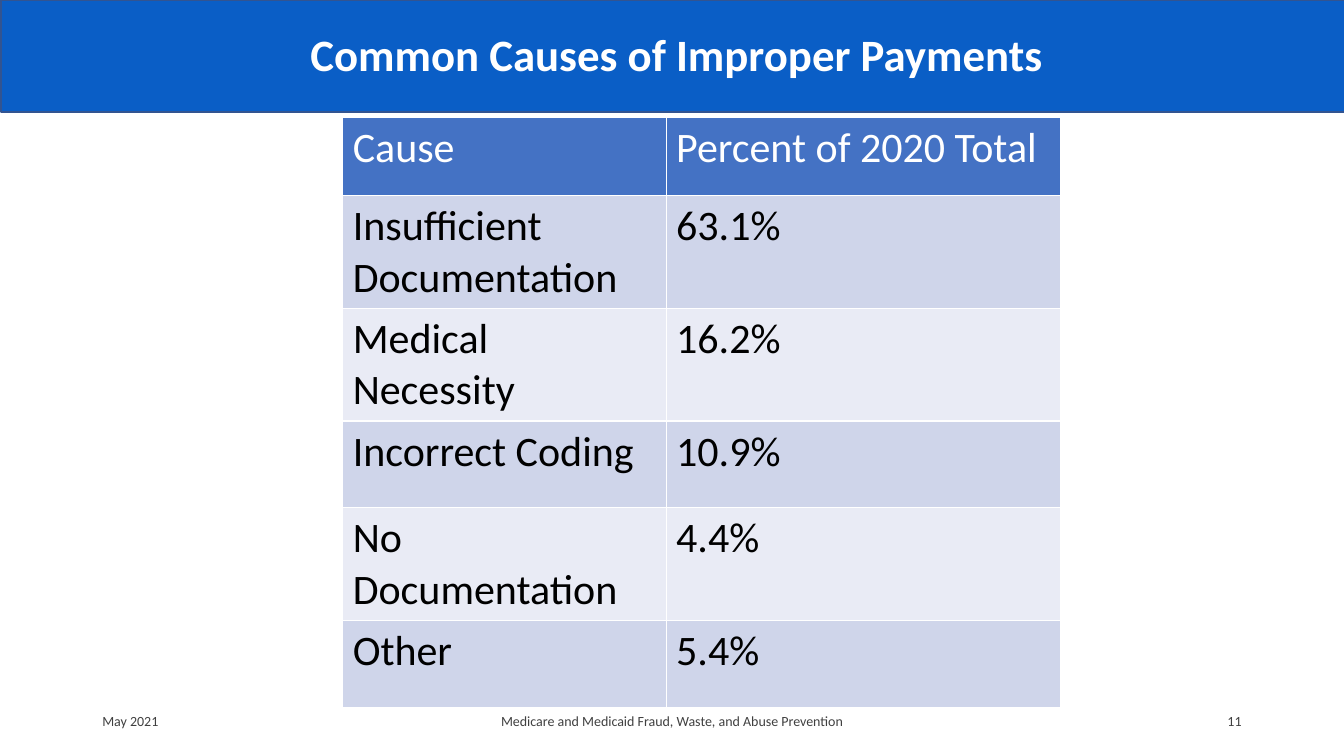
from pptx import Presentation
from pptx import util as u
from pptx.dml.color import RGBColor
from pptx.enum import shapes, text

HUES = {"blue": "0A5EC6", "edge": "325491", "head": "4472C4", "odd": "CFD5EA",
        "even": "E9EBF5", "white": "FFFFFF", "black": "000000", "grey": "404040"}
ROWS = [("Cause", "Percent of 2020 Total"),
        ("Insufficient Documentation", "63.1%"),
        ("Medical Necessity", "16.2%"),
        ("Incorrect Coding", "10.9%"),
        ("No Documentation", "4.4%"),
        ("Other", "5.4%")]
SIDES = {"left": text.PP_ALIGN.LEFT, "mid": text.PP_ALIGN.CENTER, "right": text.PP_ALIGN.RIGHT}


class Deck:
    """Holds the style and the current slide, and draws each kind of element."""

    def __init__(self, wide, high):
        self.pres = Presentation()
        self.pres.slide_width, self.pres.slide_height = u.Pt(wide), u.Pt(high)
        self.slide = self.pres.slides.add_slide(self.pres.slide_layouts[5])
        self.face = "Calibri"

    def hue(self, name):
        return RGBColor.from_string(HUES[name])

    def paint(self, item, name):
        item.fill.solid()
        item.fill.fore_color.rgb = self.hue(name)

    def letter(self, frame, words, size, hue, side="left", bold=False):
        frame.text = words
        para = frame.paragraphs[0]
        para.alignment = SIDES[side]
        look = {"name": self.face, "size": u.Pt(size), "bold": bold}
        font = para.runs[0].font
        for key, value in look.items():
            setattr(font, key, value)
        font.color.rgb = self.hue(hue)
        return para

    def frame(self, shape):
        look = {"word_wrap": True, "auto_size": text.MSO_AUTO_SIZE.NONE,
                "vertical_anchor": text.MSO_ANCHOR.MIDDLE}
        for key, value in look.items():
            setattr(shape.text_frame, key, value)
        return shape.text_frame

    def title(self, words, box):
        shape = self.slide.shapes.title
        for key, value in zip(("left", "top", "width", "height"), box):
            setattr(shape, key, u.Pt(value))
        para = self.letter(self.frame(shape), words, 32, "white", "mid", True)
        para.line_spacing = 0.9

    def band(self, box):
        bar = self.slide.shapes.add_shape(shapes.MSO_SHAPE.RECTANGLE, *map(u.Pt, box))
        bar.shadow.inherit = False
        self.paint(bar, "blue")
        bar.line.color.rgb = self.hue("edge")
        bar.line.width = u.Pt(1)
        self.slide.shapes.title._element.addprevious(bar._element)

    def label(self, words, box, side):
        shape = self.slide.shapes.add_textbox(*map(u.Pt, box))
        self.letter(self.frame(shape), words, 10, "grey", side)

    def table(self, rows, box, cols, highs):
        shape = self.slide.shapes.add_table(len(rows), len(cols), *map(u.Pt, box))
        grid = shape.table
        for col, wide in zip(grid.columns, cols):
            col.width = u.Pt(wide)
        for i, (row, words) in enumerate(zip(grid.rows, rows)):
            row.height = u.Pt(highs[i])
            fill = "head" if i == 0 else ("even", "odd")[i % 2]
            for cell, word in zip(row.cells, words):
                self.paint(cell, fill)
                self.letter(cell.text_frame, word, 30, "black" if i else "white")


def main():
    deck = Deck(960, 540)
    deck.band((0.7, 0, 960, 80))
    deck.title("Common Causes of Improper Payments", (27.4, 0.7, 912, 80.6))
    highs = [56] + [62] * 5
    deck.table(ROWS, (244.8, 83.8, 513, sum(highs)), (231, 282), highs)
    foot = [("May 2021", 66, 216, "left"),
            ("Medicare and Medicaid Fraud, Waste, and Abuse Prevention", 318, 324, "mid"),
            ("11", 678, 216, "right")]
    for words, left, wide, side in foot:
        deck.label(words, (left, 500.5, wide, 28.8), side)
    deck.pres.save("out.pptx")


if __name__ == "__main__":
    main()
